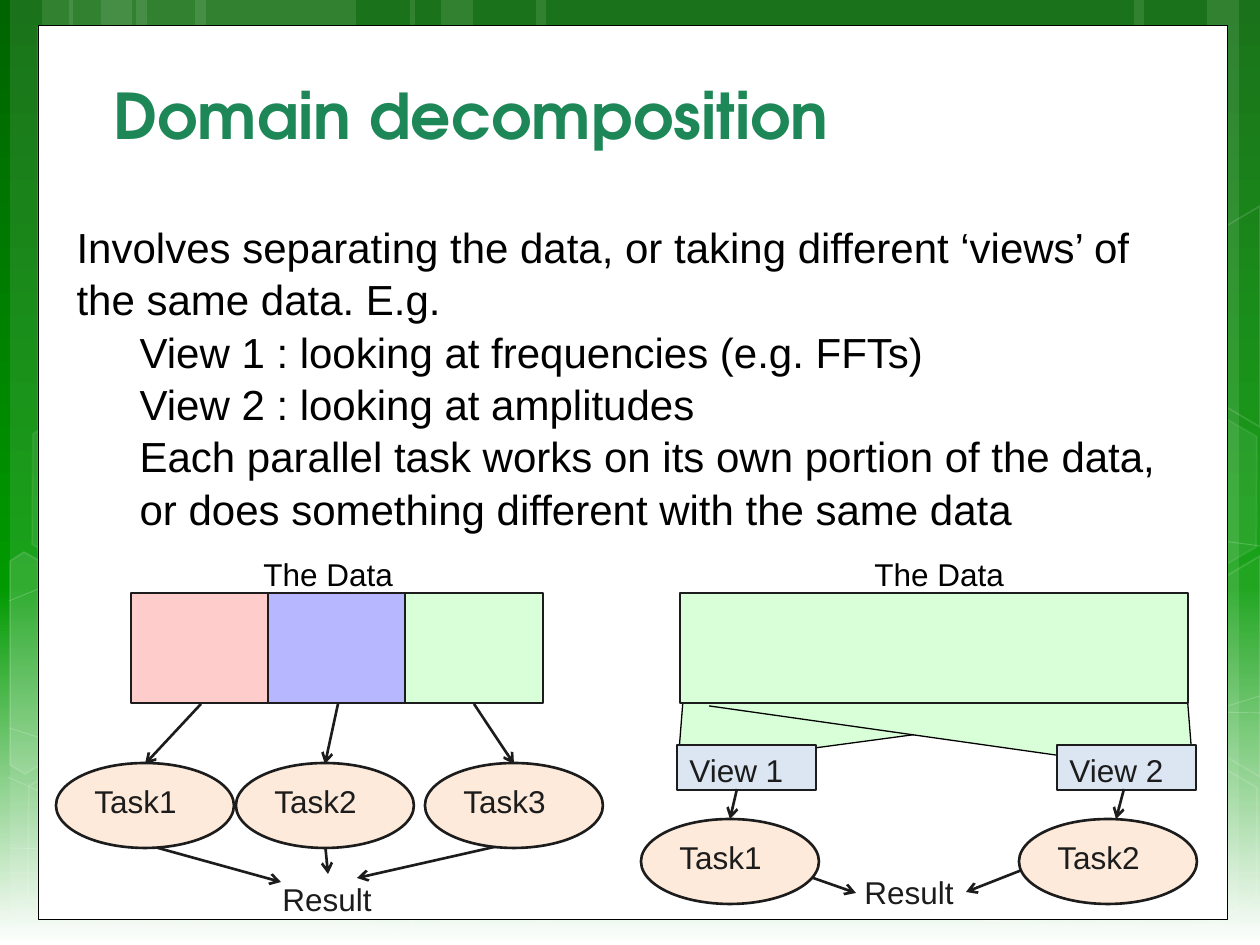
import copy
import pptx
import pptx.util
import pptx.dml.color
import pptx.enum.shapes
import pptx.enum.text
import pptx.oxml.ns
import lxml.etree

UNIT = 914400 / 126
INK, GREEN, CREAM = "1C1C1C", "D9FFD9", "FDEADA"
kind = pptx.enum.shapes.MSO_SHAPE
hue = pptx.dml.color.RGBColor.from_string
qn = pptx.oxml.ns.qn


def paint(shape, fill, line, width=0.75, clear=(100, 100)):
    """Set fill, outline and the opacity (in percent) of each."""
    shape.shadow.inherit = False
    if fill:
        shape.fill.solid()
        shape.fill.fore_color.rgb = hue(fill)
    else:
        shape.fill.background()
    if line:
        shape.line.color.rgb = hue(line)
        shape.line.width = pptx.util.Pt(width)
    else:
        shape.line.fill.background()
    for route, value in zip(("a:solidFill", "a:ln/a:solidFill"), clear):
        for node in shape.element.spPr.xpath(f"./{route}/a:srgbClr"):
            if value < 100:
                lxml.etree.SubElement(node, qn("a:alpha")).set("val", str(value * 1000))


def write(para, text, size, color, font="Arial", bold=False):
    """Add one left-aligned run."""
    para.alignment = pptx.enum.text.PP_ALIGN.LEFT
    run = para.add_run()
    run.text = text
    run.font.size = pptx.util.Pt(size)
    run.font.name = font
    run.font.bold = bold
    run.font.color.rgb = hue(color)


deck = pptx.Presentation()
deck.slide_width, deck.slide_height = round(1260 * UNIT), round(945 * UNIT)
slide = deck.slides.add_slide(deck.slide_layouts[1])
shapes = slide.shapes
title, body = shapes.title, slide.placeholders[1]

# Background gradient
back = slide.background.fill
back.gradient()
back.gradient_angle = 270
stops = slide.element.xpath(".//p:bg//a:gsLst")[0]
stops.append(copy.deepcopy(stops[-1]))
for stop, (color, pos) in zip(back.gradient_stops, (("006400", 0), ("009900", 0.62), ("FFFFFF", 1))):
    stop.color.rgb = hue(color)
    stop.position = pos

# Pale vertical bands
bands = [(136, 220), (10, 63), (42, 105), (195, 220), (69, 63), (101, 105),
         (924, 220), (1207, 53), (1134, 105), (536, 388), (410, 63), (441, 105)]
for x, w in bands:
    band = shapes.add_shape(kind.RECTANGLE, *[round(n * UNIT) for n in (x, 0, w, 945)])
    paint(band, "FFFFFF", None, clear=(10, 100))

# Faint sweeping lines
sweeps = [
    [(9, 848), (239, 854), (577, 838), (998, 777), (1260, 696)],
    [(9, 601), (152, 543), (437, 488), (824, 488), (1260, 546)],
    [(8, 777), (160, 846), (421, 944)],
    [(9, 728), (161, 776), (450, 848), (791, 905), (1075, 927), (1260, 925)],
    [(305, 944), (381, 871), (489, 805), (592, 767), (766, 728), (1000, 708), (1260, 713)],
]
for pts in sweeps:
    pen = shapes.build_freeform(*pts[0], scale=UNIT)
    pen.add_line_segments(pts[1:], close=False)
    paint(pen.convert_to_shape(), None, "FFFFFF", 0.5, (100, 20))

# Hexagons, whole and cut by the slide edge
for x, y, fill, clear in [(14, 745, None, (100, 12)), (18, 393, "FFFFFF", (7, 8)),
                          (1051, 747, None, (100, 12)), (1051, 396, "FFFFFF", (7, 8))]:
    cell = shapes.add_shape(kind.HEXAGON, *[round(n * UNIT) for n in (x, y, 220, 192)])
    cell.adjustments[0] = 0.285
    cell.rotation = 30
    paint(cell, fill, "FFFFFF", 1, clear)
cuts = [
    ([(10, 561), (24, 552), (121, 607), (120, 718), (25, 774), (10, 765)], "FFFFFF", 10),
    ([(1167, 611), (1260, 556), (1260, 777), (1167, 722)], "FFFFFF", 4),
    ([(1167, 261), (1260, 206), (1260, 427), (1167, 372)], None, 100),
]
for pts, fill, clear in cuts:
    pen = shapes.build_freeform(*pts[0], scale=UNIT)
    pen.add_line_segments(pts[1:])
    paint(pen.convert_to_shape(), fill, "FFFFFF", 1, (clear, 12))

# White panel
panel = shapes.add_shape(kind.RECTANGLE, *[round(n * UNIT) for n in (38, 26, 1189, 894)])
paint(panel, "FFFFFF", "000000", 0.5)

# Title and body, brought in front of the panel
for holder, box in ((title, (101, 62, 1061, 96)), (body, (64, 213, 1133, 318))):
    holder.left, holder.top, holder.width, holder.height = [round(n * UNIT) for n in box]
    holder.text_frame.auto_size = pptx.enum.text.MSO_AUTO_SIZE.NONE
    panel.element.getparent().append(holder.element)
title.text_frame.vertical_anchor = pptx.enum.text.MSO_ANCHOR.BOTTOM
write(title.text_frame.paragraphs[0], "Domain decomposition", 36, "1D8757", "TeX Gyre Adventor", True)

lines = [
    (0, "Involves separating the data, or taking different ‘views’ of the same data. E.g."),
    (1, "View 1 : looking at frequencies (e.g. FFTs)"),
    (1, "View 2 : looking at amplitudes"),
    (1, "Each parallel task works on its own portion of the data, or does something different with the same data"),
]
for i, (level, text) in enumerate(lines):
    para = body.text_frame.add_paragraph() if i else body.text_frame.paragraphs[0]
    para.level = level
    para.space_before = pptx.util.Pt(0)
    para.line_spacing = 1.04
    write(para, text, 24, "000000")
    props = para._p.get_or_add_pPr()
    props.set("marL", str(round(level * 63 * UNIT)))
    props.set("indent", "0")
    lxml.etree.SubElement(props, qn("a:buNone"))

# Wedges that link the shared data to its views
wedges = [[(684, 688), (679, 751), (815, 748), (1188, 698)],
          [(1187, 694), (1192, 757), (1062, 756), (709, 706)]]
for pts in wedges:
    pen = shapes.build_freeform(*pts[0], scale=UNIT)
    pen.add_line_segments(pts[1:], close=False)
    paint(pen.convert_to_shape(), GREEN, "000000")

# Arrows
arrows = [
    (201, 704, 145, 764), (338, 704, 325, 764), (474, 704, 514, 764),
    (140, 843, 281, 882), (325, 843, 328, 874), (512, 843, 357, 878),
    (737, 789, 730, 819), (1124, 789, 1116, 819),
    (756, 858, 856, 893), (1045, 861, 966, 892),
]
bars = []
for ends in arrows:
    arrow = shapes.add_connector(pptx.enum.shapes.MSO_CONNECTOR.STRAIGHT, *[round(n * UNIT) for n in ends])
    arrow.line.color.rgb = hue(INK)
    arrow.line.width = pptx.util.Pt(1.5)
    lxml.etree.SubElement(arrow.line._get_or_add_ln(), qn("a:tailEnd")).set("type", "arrow")
    lxml.etree.SubElement(arrow.element.spPr, qn("a:effectLst"))
    bars.append(arrow)

# Data blocks, views and tasks
blocks = [(131 + 137 * i, 593, 138, 110, kind.RECTANGLE, fill, "")
          for i, fill in enumerate(("FFCCCC", "B7B7FF", GREEN))]
blocks.append((680, 593, 508, 110, kind.RECTANGLE, GREEN, ""))
blocks += [(x, 745, 139, 45, kind.RECTANGLE, "DCE6F2", text)
           for x, text in ((677, "View 1"), (1057, "View 2"))]
blocks += [(x, y, 178, 85, kind.OVAL, CREAM, text) for x, y, text in (
    (56, 763, "Task1"), (236, 763, "Task2"), (425, 763, "Task3"),
    (641, 819, "Task1"), (1019, 819, "Task2"))]
for x, y, w, h, form, fill, text in blocks:
    block = shapes.add_shape(form, *[round(n * UNIT) for n in (x, y, w, h)])
    paint(block, fill, INK, 1.5 if form == kind.OVAL else 0.75)
    if text:
        block.text_frame.vertical_anchor = pptx.enum.text.MSO_ANCHOR.TOP
        write(block.text_frame.paragraphs[0], text, 18, INK)

# The arrows out of the views start on top of them
for arrow in bars[6:8]:
    panel.element.getparent().append(arrow.element)

# Labels
for x, y, w, text, color in [(251, 549, 156, "The Data", "000000"), (862, 549, 156, "The Data", "000000"),
                             (270, 874, 116, "Result", INK), (852, 867, 116, "Result", INK)]:
    label = shapes.add_textbox(*[round(n * UNIT) for n in (x, y, w, 50)])
    label.text_frame.word_wrap = False
    write(label.text_frame.paragraphs[0], text, 18, color)

deck.save("out.pptx")
